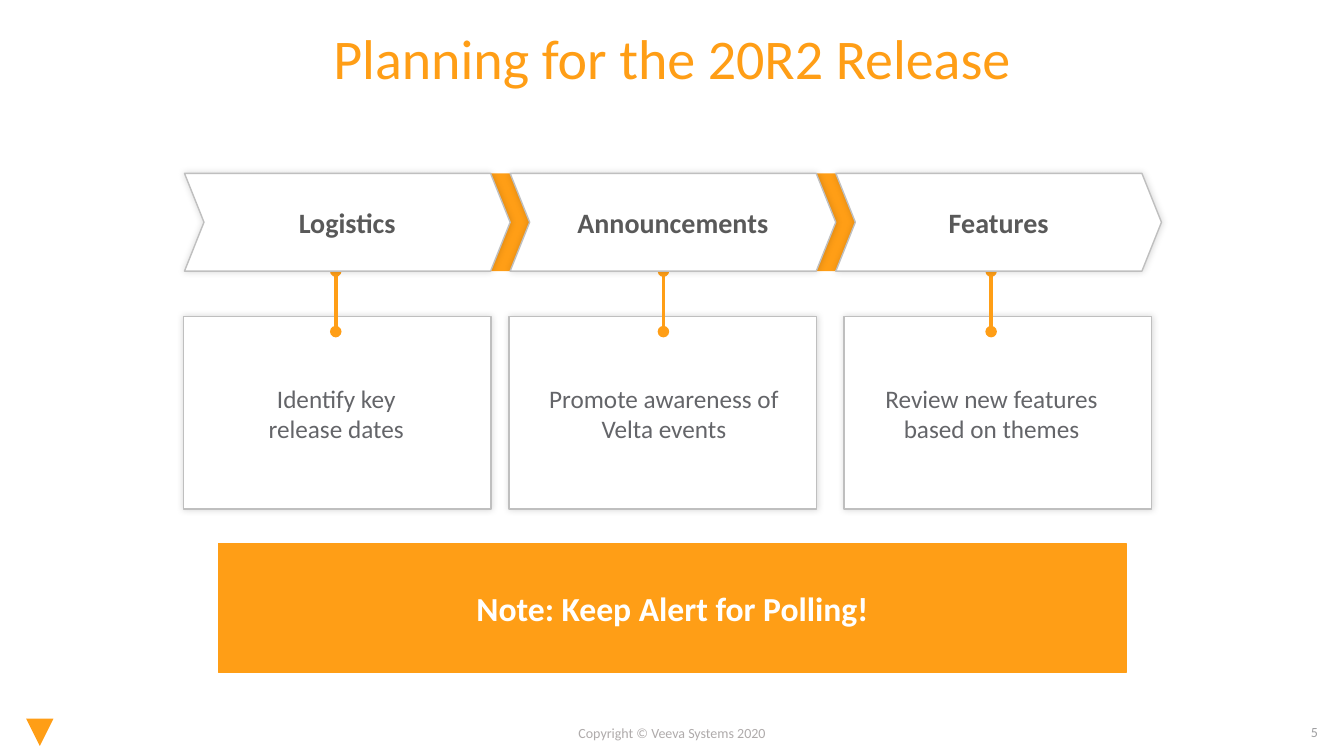
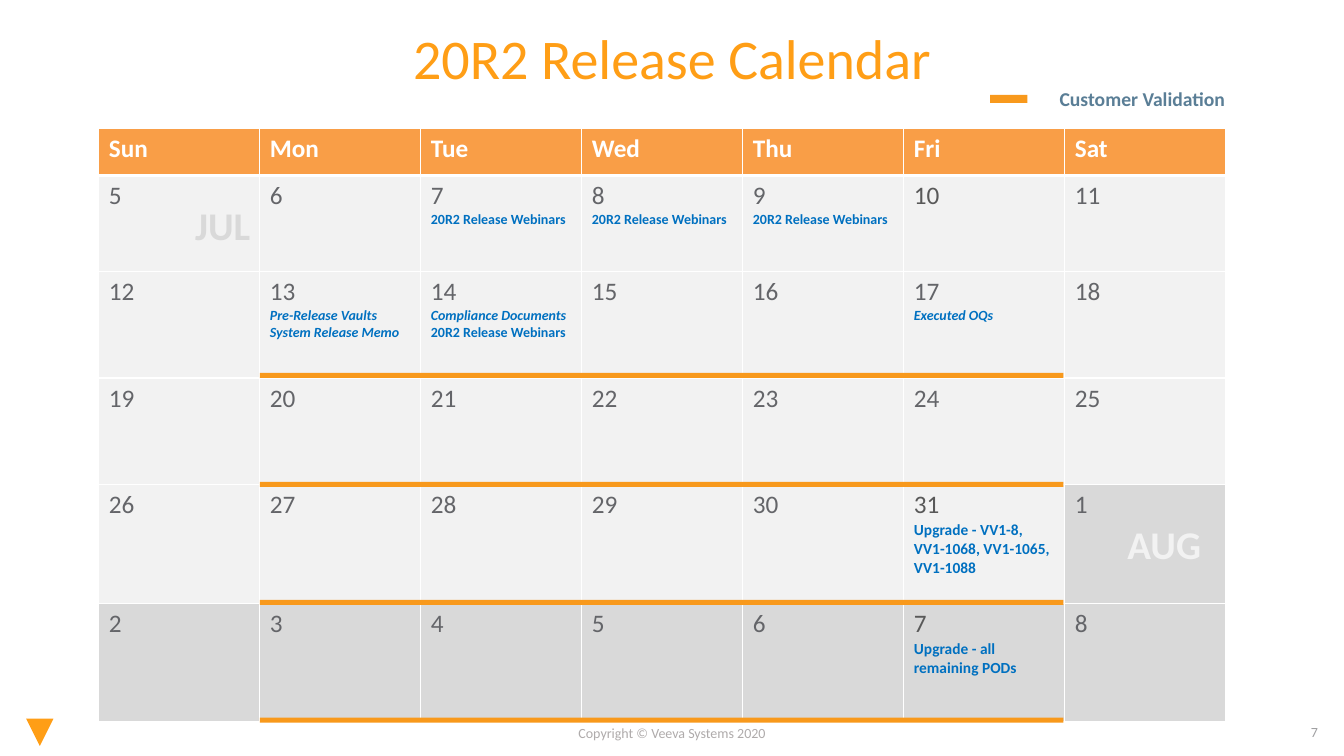
"""Build two release-planning slides: a process overview and a calendar."""
from lxml.etree import SubElement
from pptx import Presentation
from pptx.dml.color import RGBColor
from pptx.enum.shapes import MSO_CONNECTOR, MSO_SHAPE
from pptx.enum.text import MSO_ANCHOR, PP_ALIGN
from pptx.oxml.ns import qn
from pptx.util import Inches, Pt

COLORS = {
    "orange": "FF9E16", "bar": "F8991C", "header": "F99E47", "white": "FFFFFF",
    "outline": "BFBFBF", "body": "646569", "dark": "595959", "event": "0070C0",
    "legend": "5A7E96", "number": "9F9FA1", "copyright": "AFABAB",
    "july": "F2F2F2", "august": "D9D9D9", "black": "000000",
}
FONT = "Calibri"
COPYRIGHT = "Copyright © Veeva Systems 2020"

STEPS = [
    ("Logistics", "Identify key\nrelease dates", 1.82),
    ("Announcements", "Promote awareness of Velta events", 5.05),
    ("Features", "Review new features\nbased on themes", 8.37),
]
NOTE = "Note: Keep Alert for Polling!"

WEEKDAYS = ["Sun", "Mon", "Tue", "Wed", "Thu", "Fri", "Sat"]
DATES = [("july", d) for d in range(5, 32)] + [("august", d) for d in range(1, 9)]
DARK_DATES = [("july", 10), ("july", 31), ("august", 7)]
WEBINARS = ("20R2 Release Webinars", 10, False)
EVENTS = {
    ("july", 7): [WEBINARS],
    ("july", 8): [WEBINARS],
    ("july", 9): [WEBINARS],
    ("july", 13): [("Pre-Release Vaults\nSystem Release Memo", 10, True)],
    ("july", 14): [("Compliance Documents", 10, True), WEBINARS],
    ("july", 17): [("Executed OQs", 10, True)],
    ("july", 31): [("Upgrade - VV1-8,\nVV1-1068, VV1-1065, VV1-1088", 11, False)],
    ("august", 7): [("Upgrade - all remaining PODs", 11, False)],
}
MONTHS = [("JUL", 1.58, 1.95, "august"), ("AUG", 11.01, 5.11, "july")]
TABLE_LEFT, TABLE_TOP, COL_WIDTH = 0.98, 1.27, 1.597
ROW_HEIGHTS = [0.47, 0.95, 1.06, 1.06, 1.18, 1.17]
VALIDATION_TOPS = [3.7, 4.78, 5.95, 7.12]


def rgb(name):
    """Return a named colour."""
    return RGBColor.from_string(COLORS[name])


def write(tf, text, size=18, color="body", bold=False, italic=False,
          align=PP_ALIGN.LEFT, spacing=None, append=False):
    """Write each line of text as a formatted paragraph."""
    for i, line in enumerate(text.split("\n")):
        p = tf.add_paragraph() if append or i else tf.paragraphs[0]
        p.alignment = align
        if spacing:
            p.line_spacing = spacing
        r = p.add_run()
        r.text = line
        r.font.name, r.font.size = FONT, Pt(size)
        r.font.bold, r.font.italic = bold, italic
        r.font.color.rgb = rgb(color)


def add_text(s, box, text, **style):
    """Add a wrapping text box."""
    tf = s.shapes.add_textbox(*map(Inches, box)).text_frame
    tf.word_wrap = True
    write(tf, text, **style)


def add_block(s, box, fill, kind=MSO_SHAPE.RECTANGLE, line=None, glow=False):
    """Add a filled shape with an optional outline and soft shadow."""
    sp = s.shapes.add_shape(kind, *map(Inches, box))
    sp.fill.solid()
    sp.fill.fore_color.rgb = rgb(fill)
    if line:
        sp.line.color.rgb = rgb(line)
        sp.line.width = Pt(1)
    else:
        sp.line.fill.background()
    sp.shadow.inherit = False
    if glow:
        effects = sp.element.spPr.find(qn("a:effectLst"))
        shadow = SubElement(effects, qn("a:outerShdw"), blurRad=str(Pt(5)))
        color = SubElement(shadow, qn("a:srgbClr"), val=COLORS["black"])
        SubElement(color, qn("a:alpha"), val="15000")
    return sp


def add_link(s, x, top, bottom):
    """Add a vertical line with round ends."""
    c = s.shapes.add_connector(MSO_CONNECTOR.STRAIGHT,
                               *map(Inches, (x, top, x, bottom)))
    c.line.color.rgb = rgb("orange")
    c.line.width = Pt(2.75)
    ln = c.element.spPr.find(qn("a:ln"))
    for end in ("a:headEnd", "a:tailEnd"):
        SubElement(ln, qn(end), type="oval")
    SubElement(c.element.spPr, qn("a:effectLst"))


def add_slide(prs, title, number):
    """Add a slide with the shared title, corner mark and footer."""
    s = prs.slides.add_slide(prs.slide_layouts[5])
    sp = s.shapes.title
    sp.left, sp.top, sp.width, sp.height = map(Inches, (0.3, 0.11, 12.73, 1.07))
    sp.text_frame.vertical_anchor = MSO_ANCHOR.MIDDLE
    write(sp.text_frame, title, size=40, color="orange",
          align=PP_ALIGN.CENTER, spacing=0.7)
    mark = add_block(s, (0.26, 7.13, 0.27, 0.27), "orange",
                     MSO_SHAPE.ISOSCELES_TRIANGLE)
    mark.rotation = 180
    add_text(s, (12.05, 7.13, 1.12, 0.27), str(number), size=10,
             color="number", align=PP_ALIGN.RIGHT)
    add_text(s, (4.8, 7.14, 3.73, 0.27), COPYRIGHT, size=10,
             color="copyright", align=PP_ALIGN.CENTER)
    return s


def format_cell(cell, fill, top=1, bottom=1):
    """Give a cell white borders and a fill."""
    tc_pr = cell._tc.get_or_add_tcPr()
    for side, width in (("L", 1), ("R", 1), ("T", top), ("B", bottom)):
        ln = SubElement(tc_pr, qn("a:ln" + side), w=str(Pt(width)))
        solid = SubElement(ln, qn("a:solidFill"))
        SubElement(solid, qn("a:srgbClr"), val=COLORS["white"])
    cell.fill.solid()
    cell.fill.fore_color.rgb = rgb(fill)


def build_planning(prs):
    """Build the three-step planning slide."""
    s = add_slide(prs, "Planning for the 20R2 Release", 5)
    add_block(s, (2.19, 1.72, 9.1, 0.97), "orange")
    for i, (heading, detail, card_left) in enumerate(STEPS):
        add_block(s, (card_left, 3.14, 3.05, 1.91), "white",
                  line="outline", glow=True)
        add_text(s, (1.95 + 3.25 * i, 3.75, 2.77, 0.71), detail,
                 align=PP_ALIGN.CENTER)
        add_link(s, 3.33 + 3.25 * i, 2.69, 3.29)
    for i, (heading, detail, card_left) in enumerate(STEPS):
        sp = add_block(s, (1.83 + 3.23 * i, 1.72, 3.23, 0.97), "white",
                       MSO_SHAPE.CHEVRON, line="outline", glow=True)
        sp.adjustments[0] = 0.2
        write(sp.text_frame, heading, size=20, color="dark", bold=True,
              align=PP_ALIGN.CENTER)
    sp = add_block(s, (2.17, 5.39, 9, 1.28), "orange", line="orange")
    write(sp.text_frame, NOTE, size=24, color="white", bold=True,
          align=PP_ALIGN.CENTER)


def build_calendar(prs):
    """Build the calendar slide."""
    s = add_slide(prs, "20R2 Release Calendar", 7)
    days = len(WEEKDAYS)
    box = (TABLE_LEFT, TABLE_TOP, COL_WIDTH * days, sum(ROW_HEIGHTS))
    table = s.shapes.add_table(len(ROW_HEIGHTS), days, *map(Inches, box)).table
    table.horz_banding = False
    for row, height in zip(table.rows, ROW_HEIGHTS):
        row.height = Inches(height)
    for col, day in enumerate(WEEKDAYS):
        table.columns[col].width = Inches(COL_WIDTH)
        cell = table.cell(0, col)
        format_cell(cell, "header", bottom=3)
        write(cell.text_frame, day, color="white", bold=True)
    for i, date in enumerate(DATES):
        month, day = date
        row, col = divmod(i, days)
        cell = table.cell(row + 1, col)
        format_cell(cell, month, top=1 if row else 3)
        write(cell.text_frame, str(day),
              color="dark" if date in DARK_DATES else "body")
        for text, size, italic in EVENTS.get(date, []):
            write(cell.text_frame, text, size=size, color="event", bold=True,
                  italic=italic, append=True)
    for name, left, top, color in MONTHS:
        add_text(s, (left, top, 1, 0.57), name, size=28, color=color,
                 bold=True, align=PP_ALIGN.RIGHT)
    add_block(s, (9.82, 0.94, 0.37, 0.08), "bar")
    add_text(s, (10.16, 0.81, 2.09, 0.34), "Customer Validation", size=14,
             color="legend", bold=True, align=PP_ALIGN.RIGHT)
    for top in VALIDATION_TOPS:
        add_block(s, (TABLE_LEFT + COL_WIDTH, top, 7.97, 0.05), "bar")


def main():
    """Build and save the presentation."""
    prs = Presentation()
    prs.slide_width, prs.slide_height = Inches(13.33), Inches(7.5)
    build_planning(prs)
    build_calendar(prs)
    prs.save("out.pptx")


if __name__ == "__main__":
    main()
